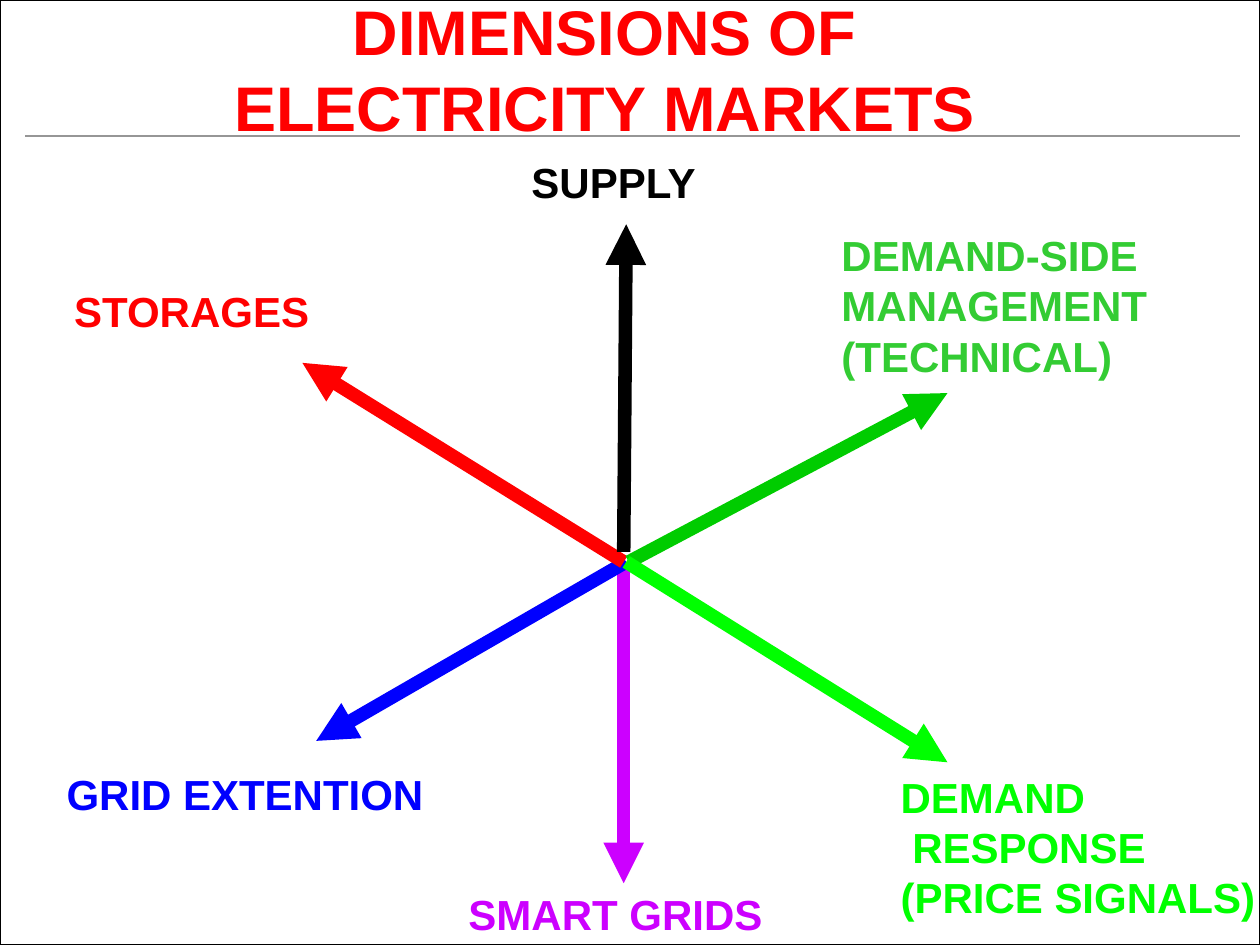
import pptx
import pptx.dml.color
import pptx.enum.shapes
import pptx.enum.text
import pptx.oxml
import pptx.oxml.ns
import pptx.util
from pptx.util import Inches

COLORS = {
    "white": "FFFFFF",
    "black": "000000",
    "gray": "969696",
    "red": "FF0000",
    "blue": "0000FF",
    "purple": "CC00FF",
    "green": "00CC00",
    "soft_green": "33CC33",
    "lime": "00FF00",
}

DIMENSIONS = [
    {"text": "SMART GRIDS", "color": "purple", "label": (3.62, 7, 2.56, 0.5),
     "start": (4.95, 4.46), "tip": (4.95, 7.01)},
    {"text": "GRID EXTENTION", "color": "blue", "label": (0.43, 6.05, 3.06, 0.5),
     "start": (4.97, 4.46), "tip": (2.51, 5.88)},
    {"text": "STORAGES", "color": "red", "label": (0.49, 2.22, 2.08, 0.5),
     "start": (4.95, 4.46), "tip": (2.4, 2.88)},
    {"text": "DEMAND-SIDE\vMANAGEMENT\v(TECHNICAL)", "color": "soft_green",
     "arrow_color": "green", "label": (6.58, 1.77, 2.75, 1.31),
     "start": (4.99, 4.46), "tip": (7.52, 3.12)},
    {"text": "DEMAND\v RESPONSE\v(PRICE SIGNALS)", "color": "lime",
     "label": (7.05, 6.07, 3.04, 1.31), "start": (4.97, 4.46), "tip": (7.52, 6.05)},
    {"text": "SUPPLY", "color": "black", "label": (4.12, 1.19, 1.5, 0.5),
     "start": (4.95, 4.38), "tip": (4.97, 1.78)},
]


def rgb(color):
    """Return the named colour."""
    return pptx.dml.color.RGBColor.from_string(COLORS[color])


def add_text(slide, text, box, color, size=24, wrap=False, align="LEFT", anchor="TOP"):
    """Place bold text in a box given in inches."""
    frame = slide.shapes.add_textbox(*map(Inches, box)).text_frame
    frame.word_wrap = wrap
    frame.vertical_anchor = pptx.enum.text.MSO_ANCHOR[anchor]
    paragraph = frame.paragraphs[0]
    paragraph.text = text
    paragraph.alignment = pptx.enum.text.PP_ALIGN[align]
    for run in paragraph.runs:
        run.font.name = "Arial"
        run.font.size = pptx.util.Pt(size)
        run.font.bold = True
        run.font.color.rgb = rgb(color)


def add_line(slide, start, end, color, width=0.75, arrow=False):
    """Draw a straight line, optionally with an arrowhead at its end."""
    line = slide.shapes.add_connector(
        pptx.enum.shapes.MSO_CONNECTOR.STRAIGHT, *map(Inches, (*start, *end)))
    line.line.color.rgb = rgb(color)
    line.line.width = pptx.util.Pt(width)
    if arrow:
        head = pptx.oxml.parse_xml(
            f'<a:tailEnd {pptx.oxml.ns.nsdecls("a")} type="triangle"/>')
        line.line._get_or_add_ln().append(head)
    line._element.spPr.append(
        pptx.oxml.parse_xml(f'<a:effectLst {pptx.oxml.ns.nsdecls("a")}/>'))


def add_frame(slide, left, top, width, height):
    """Draw the bordered page and the rule below the title."""
    page = slide.shapes.add_shape(
        pptx.enum.shapes.MSO_SHAPE.RECTANGLE, *map(Inches, (left, top, width, height)))
    page.shadow.inherit = False
    page.fill.solid()
    page.fill.fore_color.rgb = rgb("white")
    page.line.color.rgb = rgb("black")
    page.line.width = pptx.util.Pt(0.75)
    rule_top = top + 1.08
    add_line(slide, (left + 0.2, rule_top), (left + width - 0.16, rule_top), "gray")


def add_title(slide, box):
    """Place the centred slide title."""
    add_text(slide, "DIMENSIONS OF ELECTRICITY MARKETS", box, "red",
             size=36, wrap=True, align="CENTER", anchor="MIDDLE")


def add_dimensions(slide, left, top):
    """Draw the labelled arrows relative to the region's corner."""
    for dimension in DIMENSIONS:
        start, tip = ((left + x, top + y)
                      for x, y in (dimension["start"], dimension["tip"]))
        color = dimension["color"]
        add_line(slide, start, tip, dimension.get("arrow_color", color),
                 width=7.75, arrow=True)
        x, y, width, height = dimension["label"]
        add_text(slide, dimension["text"], (left + x, top + y, width, height), color)


def main():
    """Build and save the slide."""
    presentation = pptx.Presentation()
    presentation.slide_width = Inches(10)
    presentation.slide_height = Inches(7.5)
    slide = presentation.slides.add_slide(presentation.slide_layouts[6])
    add_frame(slide, 0, 0, 10, 7.5)
    add_title(slide, (1.54, 0.08, 6.52, 0.92))
    add_dimensions(slide, 0, 0)
    presentation.save("out.pptx")


if __name__ == "__main__":
    main()
